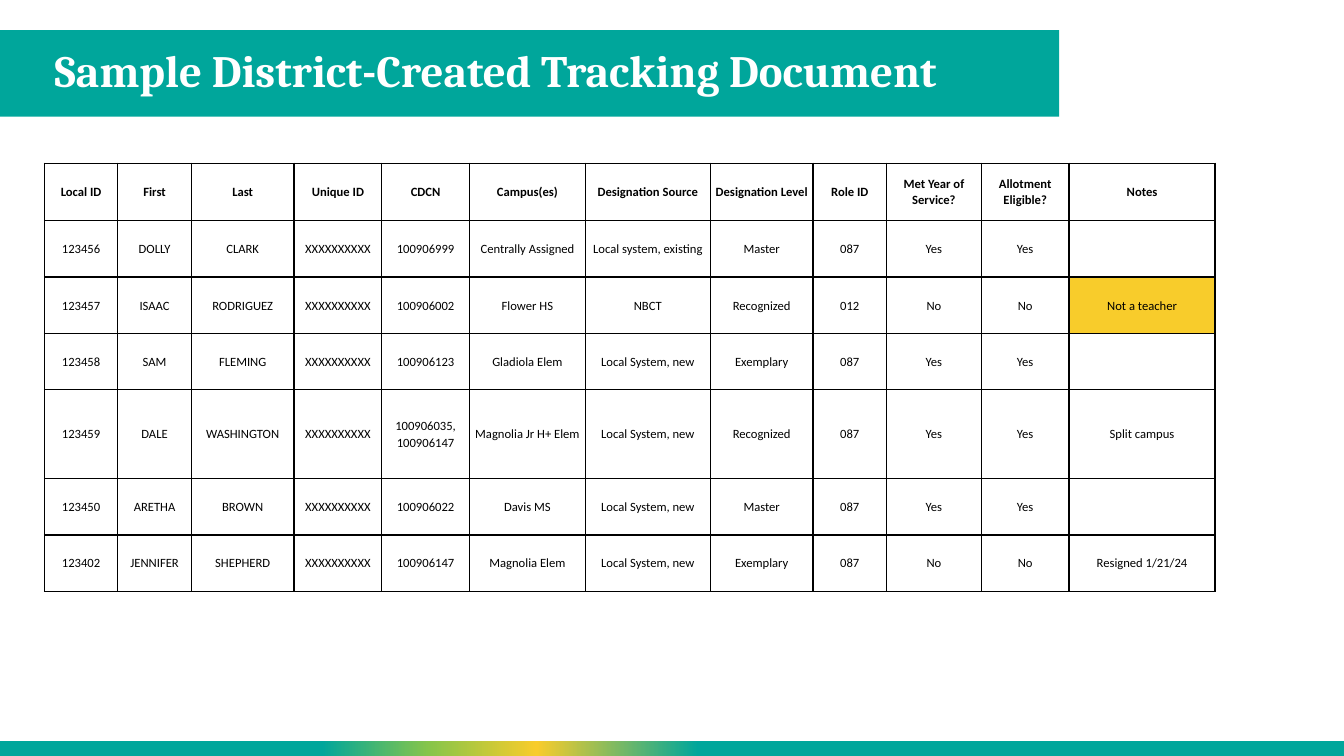
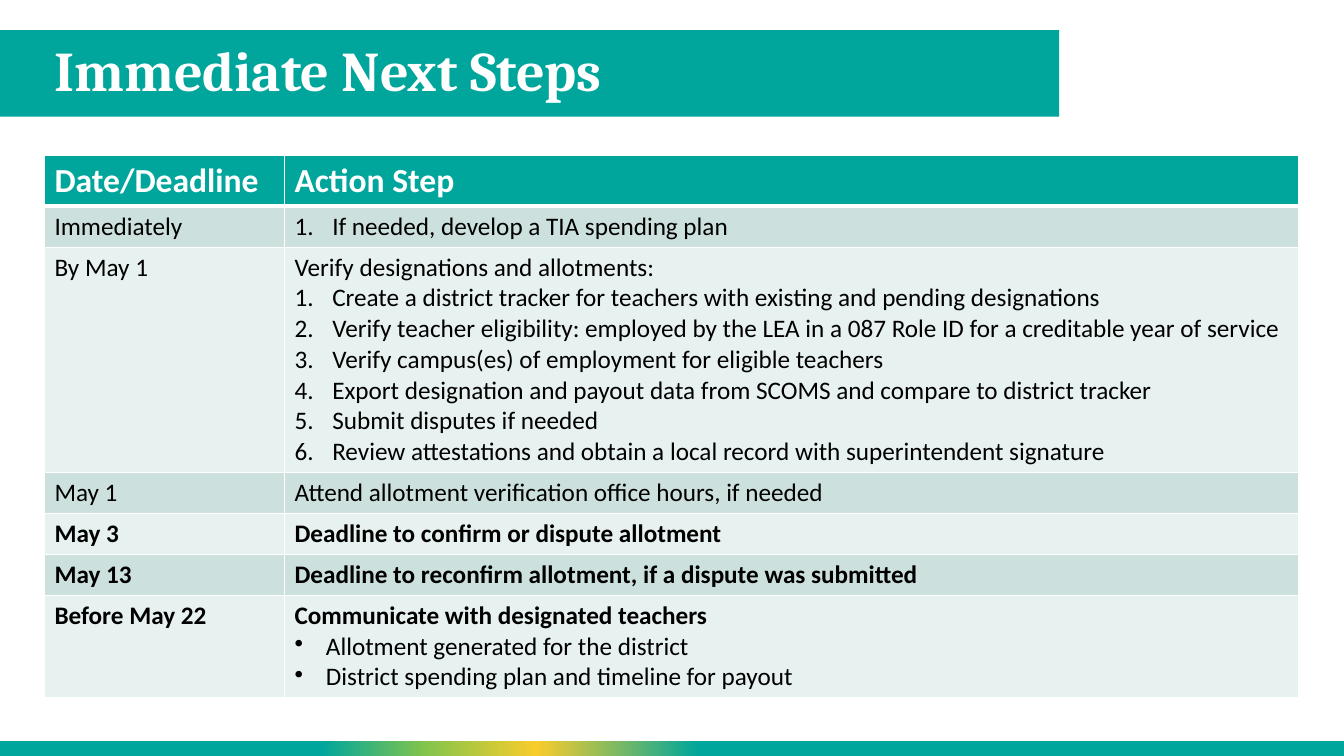
from dataclasses import dataclass
from typing import Optional

from lxml.etree import SubElement
from pptx import Presentation
from pptx.dml.color import RGBColor
from pptx.enum.shapes import MSO_SHAPE as Preset
from pptx.enum.text import MSO_ANCHOR as Anchor, MSO_AUTO_SIZE as AutoSize, PP_ALIGN as Align
from pptx.oxml.ns import qn
from pptx.util import Cm, Pt

TEAL, YELLOW, GREEN = "00A69B", "F8CC2B", "87C54A"
WHITE, BLACK = "FFFFFF", "000000"
STRIPES = ("CCE1DE", "E7F1EF")
BODY_FONT, TITLE_FONT = "Calibri", "Cambria"
MARGIN = 1.12
FOOTER_STOPS = ((0, TEAL), (48, TEAL), (60, YELLOW), (68, GREEN), (76, TEAL), (100, TEAL))
SIDES = ("L", "R", "T", "B")


@dataclass(frozen=True)
class Marker:
    """A list marker with its hanging indent in centimetres."""
    tag: str
    attribute: str
    value: str
    indent: float


@dataclass(frozen=True)
class Line:
    """One paragraph of an action step."""
    text: str
    marker: Optional[Marker] = None
    bold: bool = False


@dataclass(frozen=True)
class Step:
    """A deadline and the actions due by it."""
    date: str
    lines: tuple[Line, ...]
    height: float = 1.03
    bold: bool = False


NUMBER = Marker("a:buAutoNum", "type", "arabicPeriod", 0.95)
BULLET = Marker("a:buChar", "char", "•", 0.79)

TRACKER_WIDTHS = (1.85, 1.85, 2.59, 2.21, 2.21, 2.92, 3.15, 2.59, 1.85, 2.39, 2.21, 3.68)
TRACKER_HEIGHTS = (1.45, 1.42, 1.42, 1.42, 2.24, 1.42, 1.42)
TRACKER_ROWS = (
    ("Local ID", "First", "Last", "Unique ID", "CDCN", "Campus(es)", "Designation Source",
     "Designation Level", "Role ID", "Met Year of Service?", "Allotment Eligible?", "Notes"),
    ("123456", "DOLLY", "CLARK", "XXXXXXXXXX", "100906999", "Centrally Assigned",
     "Local system, existing", "Master", "087", "Yes", "Yes", ""),
    ("123457", "ISAAC", "RODRIGUEZ", "XXXXXXXXXX", "100906002", "Flower HS",
     "NBCT", "Recognized", "012", "No", "No", "Not a teacher"),
    ("123458", "SAM", "FLEMING", "XXXXXXXXXX", "100906123", "Gladiola Elem",
     "Local System, new", "Exemplary", "087", "Yes", "Yes", ""),
    ("123459", "DALE", "WASHINGTON", "XXXXXXXXXX", "100906035, 100906147", "Magnolia Jr H+ Elem",
     "Local System, new", "Recognized", "087", "Yes", "Yes", "Split campus"),
    ("123450", "ARETHA", "BROWN", "XXXXXXXXXX", "100906022", "Davis MS",
     "Local System, new", "Master", "087", "Yes", "Yes", ""),
    ("123402", "JENNIFER", "SHEPHERD", "XXXXXXXXXX", "100906147", "Magnolia Elem",
     "Local System, new", "Exemplary", "087", "No", "No", "Resigned 1/21/24"),
)
HIGHLIGHT = "Not a teacher"

STEP_HEADERS = ("Date/Deadline", "Action Step")
STEPS = (
    Step("Immediately", (Line("If needed, develop a TIA spending plan", NUMBER),)),
    Step("By May 1", (
        Line("Verify designations and allotments:"),
        Line("Create a district tracker for teachers with existing and pending designations", NUMBER),
        Line("Verify teacher eligibility: employed by the LEA in a 087 Role ID "
             "for a creditable year of service", NUMBER),
        Line("Verify campus(es) of employment for eligible teachers", NUMBER),
        Line("Export designation and payout data from SCOMS and compare to district tracker", NUMBER),
        Line("Submit disputes if needed", NUMBER),
        Line("Review attestations and obtain a local record with superintendent signature", NUMBER),
    ), height=5.67),
    Step("May 1", (Line("Attend allotment verification office hours, if needed"),)),
    Step("May 3", (Line("Deadline to confirm or dispute allotment", bold=True),), bold=True),
    Step("May 13", (Line("Deadline to reconfirm allotment, if a dispute was submitted", bold=True),),
         bold=True),
    Step("Before May 22", (
        Line("Communicate with designated teachers", bold=True),
        Line("Allotment generated for the district", BULLET),
        Line("District spending plan and timeline for payout", BULLET),
    ), height=2.57, bold=True),
)


def rgb(value: str) -> RGBColor:
    """Turn a hex string into a colour."""
    return RGBColor.from_string(value)


def write(para, text: str, *, size: float, color: str = BLACK, bold: bool = False,
          font: str = BODY_FONT, align=Align.LEFT, spacing: float = 1.0,
          marker: Optional[Marker] = None) -> None:
    """Fill a paragraph with one formatted run."""
    para.alignment = align
    para.line_spacing = spacing
    if marker:
        properties = para._p.get_or_add_pPr()
        properties.set("marL", str(Cm(marker.indent)))
        properties.set("indent", str(-Cm(marker.indent)))
        SubElement(properties, qn(marker.tag)).set(marker.attribute, marker.value)
    span = para.add_run()
    span.text = text
    span.font.name, span.font.size, span.font.bold = font, Pt(size), bold
    span.font.color.rgb = rgb(color)


def add_solid(parent, color: str) -> None:
    """Append a solid colour to a line element."""
    SubElement(SubElement(parent, qn("a:solidFill")), qn("a:srgbClr")).set("val", color)


def style_cell(cell, *, border: str, fill: Optional[str] = None,
               top: float = 1, bottom: float = 1) -> None:
    """Set the borders and the fill of a cell."""
    properties = cell._tc.get_or_add_tcPr()
    for side, width in zip(SIDES, (1, 1, top, bottom)):
        edge = SubElement(properties, qn(f"a:ln{side}"))
        edge.set("w", str(Pt(width)))
        add_solid(edge, border)
    if fill:
        cell.fill.solid()
        cell.fill.fore_color.rgb = rgb(fill)
    else:
        cell.fill.background()


def add_grid(page, top: float, widths: tuple[float, ...], heights: tuple[float, ...]):
    """Add an unbanded table with the given columns and rows."""
    frame = page.shapes.add_table(len(heights), len(widths), Cm(MARGIN), Cm(top),
                                  Cm(sum(widths)), Cm(sum(heights)))
    table = frame.table
    table.horz_banding = False
    for column, width in zip(table.columns, widths):
        column.width = Cm(width)
    for row, height in zip(table.rows, heights):
        row.height = Cm(height)
    return table


def add_bands(page, layout) -> None:
    """Draw the title band and the footer band and place them on the layout."""
    for top, width, height, stops in ((0.76, 26.72, 2.18, ()), (18.67, 33.9, 0.38, FOOTER_STOPS)):
        band = page.shapes.add_shape(Preset.RECTANGLE, Cm(-0.03), Cm(top), Cm(width), Cm(height))
        band.shadow.inherit = False
        band.line.fill.background()
        if stops:
            band.fill.gradient()
            gradient = band.element.spPr.find(qn("a:gradFill"))
            stop_list = gradient.find(qn("a:gsLst"))
            for old_stop in list(stop_list):
                stop_list.remove(old_stop)
            for position, color in stops:
                stop = SubElement(stop_list, qn("a:gs"))
                stop.set("pos", str(position * 1000))
                SubElement(stop, qn("a:srgbClr")).set("val", color)
            gradient.find(qn("a:lin")).set("ang", str(180 * 60000))
        else:
            band.fill.solid()
            band.fill.fore_color.rgb = rgb(TEAL)
        layout.shapes.element.insert(2, band.element)


def add_page(deck, layout, title: str, size: float):
    """Add a slide with its title set in the band."""
    page = deck.slides.add_slide(layout)
    box = page.shapes.title
    box.left, box.top, box.width, box.height = Cm(MARGIN), Cm(0.76), Cm(25.55), Cm(2.18)
    frame = box.text_frame
    frame.auto_size = AutoSize.NONE
    frame.word_wrap = True
    frame.vertical_anchor = Anchor.MIDDLE
    write(frame.paragraphs[0], title, size=size, color=WHITE, bold=True,
          font=TITLE_FONT, spacing=0.9)
    return page


def add_tracker(page) -> None:
    """Draw the tracking table."""
    table = add_grid(page, 4.11, TRACKER_WIDTHS, TRACKER_HEIGHTS)
    for row, texts in enumerate(TRACKER_ROWS):
        for column, text in enumerate(texts):
            cell = table.cell(row, column)
            cell.margin_left = cell.margin_right = cell.margin_top = cell.margin_bottom = Cm(0.12)
            cell.vertical_anchor = Anchor.MIDDLE
            style_cell(cell, border=BLACK, fill=YELLOW if text == HIGHLIGHT else None)
            if text:
                write(cell.text_frame.paragraphs[0], text, size=9, bold=row == 0,
                      align=Align.CENTER, spacing=1.07)


def add_steps(page) -> None:
    """Draw the table of deadlines and action steps."""
    table = add_grid(page, 3.91, (6.05, 25.55), (1.25, *(step.height for step in STEPS)))
    for column, text in enumerate(STEP_HEADERS):
        cell = table.cell(0, column)
        style_cell(cell, border=WHITE, fill=TEAL, bottom=3)
        write(cell.text_frame.paragraphs[0], text, size=24, color=WHITE, bold=True)
    for row, step in enumerate(STEPS, start=1):
        for column, lines in enumerate(((Line(step.date, bold=step.bold),), step.lines)):
            cell = table.cell(row, column)
            style_cell(cell, border=WHITE, fill=STRIPES[(row - 1) % 2], top=3 if row == 1 else 1)
            frame = cell.text_frame
            for index, line in enumerate(lines):
                para = frame.add_paragraph() if index else frame.paragraphs[0]
                write(para, line.text, size=18, bold=line.bold, marker=line.marker)


def main() -> None:
    """Build and save the deck."""
    deck = Presentation()
    deck.slide_width, deck.slide_height = Cm(33.87), Cm(19.05)
    layout = deck.slide_layouts[5]
    tracker_page = add_page(deck, layout, "Sample District-Created Tracking Document", 32)
    add_bands(tracker_page, layout)
    add_tracker(tracker_page)
    add_steps(add_page(deck, layout, "Immediate Next Steps", 40))
    deck.save("out.pptx")


if __name__ == "__main__":
    main()
